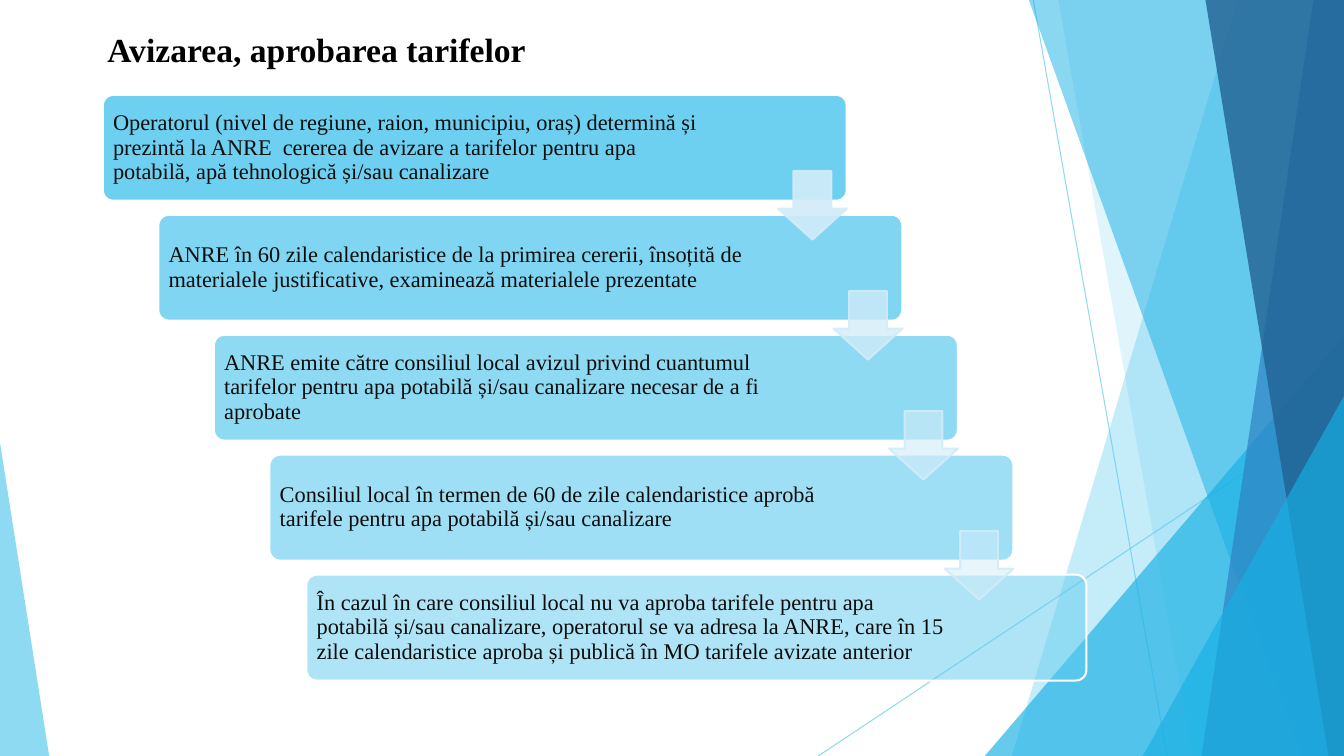
from dataclasses import dataclass

from lxml import etree
from pptx import Presentation
from pptx.dml.color import RGBColor
from pptx.enum.shapes import MSO_CONNECTOR, MSO_SHAPE
from pptx.enum.text import MSO_ANCHOR, MSO_AUTO_SIZE, PP_ALIGN
from pptx.oxml.ns import qn
from pptx.util import Cm, Pt

TRIANGLE = MSO_SHAPE.ISOSCELES_TRIANGLE
ROUNDED = MSO_SHAPE.ROUNDED_RECTANGLE
DOWN_ARROW = MSO_SHAPE.DOWN_ARROW
STRAIGHT = MSO_CONNECTOR.STRAIGHT
MIDDLE = MSO_ANCHOR.MIDDLE
TOP = MSO_ANCHOR.TOP
LEFT = PP_ALIGN.LEFT
FIT_SHAPE = MSO_AUTO_SIZE.SHAPE_TO_FIT_TEXT


@dataclass(frozen=True)
class Theme:
    font: str = "Times New Roman"
    title_size: float = 24
    body_size: float = 16
    title_color: str = "000000"
    body_color: str = "0D0D0D"
    white: str = "FFFFFF"
    sky: str = "5FCBEF"
    cyan: str = "17B0E4"
    blue: str = "2E83C3"
    navy: str = "226292"
    arrow: str = "D2ECF9"
    thin: float = 0.75
    outline: float = 1.5


THEME = Theme()
WIDTH, HEIGHT = 33.87, 19.05
TITLE = "Avizarea, aprobarea tarifelor"
STEPS = [
    "Operatorul (nivel de regiune, raion, municipiu, oraș) determină și prezintă la ANRE  cererea "
    "de avizare a tarifelor pentru apa potabilă, apă tehnologică și/sau canalizare",
    "ANRE în 60 zile calendaristice de la primirea cererii, însoțită de materialele justificative, "
    "examinează materialele prezentate",
    "ANRE emite către consiliul local avizul privind cuantumul tarifelor pentru apa potabilă "
    "și/sau canalizare necesar de a fi aprobate",
    "Consiliul local în termen de 60 de zile calendaristice aprobă tarifele pentru apa potabilă "
    "și/sau canalizare",
    "În cazul în care consiliul local nu va aproba tarifele pentru apa potabilă și/sau canalizare, "
    "operatorul se va adresa la ANRE, care în 15 zile calendaristice aproba și publică în MO "
    "tarifele avizate anterior",
]
ARROW_ALPHAS = [90, 77, 63, 50]


def paint(fmt, color, alpha):
    fmt.solid()
    fmt.fore_color.rgb = RGBColor.from_string(color)
    for clr in fmt._xPr.iter(qn("a:srgbClr")):
        if clr.getparent().getparent() is fmt._xPr:
            etree.SubElement(clr, qn("a:alpha"), val=str(alpha * 1000))


def style(sp, color, alpha, line=None, line_alpha=100):
    sp.shadow.inherit = False
    paint(sp.fill, color, alpha)
    if line:
        sp.line.width = Pt(THEME.outline)
        paint(sp.line.fill, line, line_alpha)
    else:
        sp.line.fill.background()


def add_preset(slide, kind, box, adjustments):
    sp = slide.shapes.add_shape(kind, *map(Cm, box))
    for i, value in enumerate(adjustments):
        sp.adjustments[i] = value
    return sp


def add_text(slide, box, text, size, color, bold=False):
    sp = slide.shapes.add_textbox(*map(Cm, box))
    tf = sp.text_frame
    tf.word_wrap = True
    tf.text = text
    p = tf.paragraphs[0]
    p.alignment = LEFT
    font = p.runs[0].font
    font.name, font.size, font.bold = THEME.font, Pt(size), bold
    font.color.rgb = RGBColor.from_string(color)
    return tf


def add_ray(slide, x1, y1, x2, y2):
    cn = slide.shapes.add_connector(STRAIGHT, Cm(x1), Cm(y1), Cm(x2), Cm(y2))
    cn.line.width = Pt(THEME.thin)
    paint(cn.line.fill, THEME.sky, 70)
    etree.SubElement(cn._element.spPr, qn("a:effectLst"))


def add_band(slide, box, top_x, bottom_x, color, alpha):
    left, top, width, height = box
    right, bottom = left + width, top + height
    fb = slide.shapes.build_freeform(Cm(left + top_x), Cm(top))
    corners = [(right, top), (right, bottom), (left + bottom_x, bottom)]
    fb.add_line_segments([(Cm(x), Cm(y)) for x, y in corners], close=True)
    style(fb.convert_to_shape(), color, alpha)


def add_corner(slide, box, width, height, color, alpha, apex):
    left, top, box_width, box_height = box
    x = left + apex * (box_width - width)
    y = top + box_height - height
    style(add_preset(slide, TRIANGLE, (x, y, width, height), [apex]), color, alpha)


def add_facets(slide, box):
    left, top, width, height = box
    right, bottom = left + width, top + height
    add_ray(slide, left + 26.04, top, left + 29.41, bottom)
    add_ray(slide, right, top + 10.24, left + 20.62, bottom)
    add_band(slide, box, 31.19, 25.5, THEME.sky, 36)
    add_band(slide, box, 26.67, 30.05, THEME.sky, 20)
    add_corner(slide, box, 9.05, 10.59, THEME.cyan, 66, 1)
    add_band(slide, box, 25.93, 32.79, THEME.cyan, 50)
    add_band(slide, box, 33.1, 30.28, THEME.blue, 70)
    add_band(slide, box, 30.38, 33.48, THEME.navy, 80)
    add_corner(slide, box, 5.07, 9.07, THEME.cyan, 66, 1)
    add_corner(slide, box, 1.24, 7.9, THEME.sky, 70, 0)


def add_title(slide, box):
    tf = add_text(slide, box, TITLE, THEME.title_size, THEME.title_color, bold=True)
    tf.vertical_anchor = TOP
    tf.auto_size = FIT_SHAPE


def add_card(slide, box, text, alpha):
    left, top, width, height = box
    style(add_preset(slide, ROUNDED, box, [0.1]), THEME.sky, alpha, THEME.white)
    inner = (left + 0.08, top + 0.08, width * 0.826, height - 0.16)
    tf = add_text(slide, inner, text, THEME.body_size, THEME.body_color)
    tf.vertical_anchor = MIDDLE
    tf.margin_left = tf.margin_right = tf.margin_top = tf.margin_bottom = Cm(0.18)
    tf.paragraphs[0].line_spacing = 0.9


def add_steps(slide, box):
    left, top, width, height = box
    card_w, card_h, last_w, step_x, arrow = 18.75, 2.67, 19.66, 1.4, 1.73
    last = len(STEPS) - 1
    step_y = (height - card_h) / last
    for i, text in enumerate(STEPS):
        w = last_w if i == last else card_w
        x = left + width - w if i == last else left + i * step_x
        add_card(slide, (x, top + i * step_y, w, card_h), text, 90 - 10 * i)
    for i, alpha in enumerate(ARROW_ALPHAS):
        x = left + i * step_x + card_w - arrow
        y = top + i * step_y + 1.92
        sp = add_preset(slide, DOWN_ARROW, (x, y, arrow, arrow), [0.55, 0.45])
        style(sp, THEME.arrow, alpha, THEME.arrow, 90)


def main():
    prs = Presentation()
    prs.slide_width, prs.slide_height = Cm(WIDTH), Cm(HEIGHT)
    slide = prs.slides.add_slide(prs.slide_layouts[6])
    add_facets(slide, (0, 0, WIDTH, HEIGHT))
    add_title(slide, (2.46, 0.61, 20.75, 1.32))
    add_steps(slide, (2.59, 2.39, 24.79, 14.76))
    prs.save("out.pptx")


if __name__ == "__main__":
    main()
